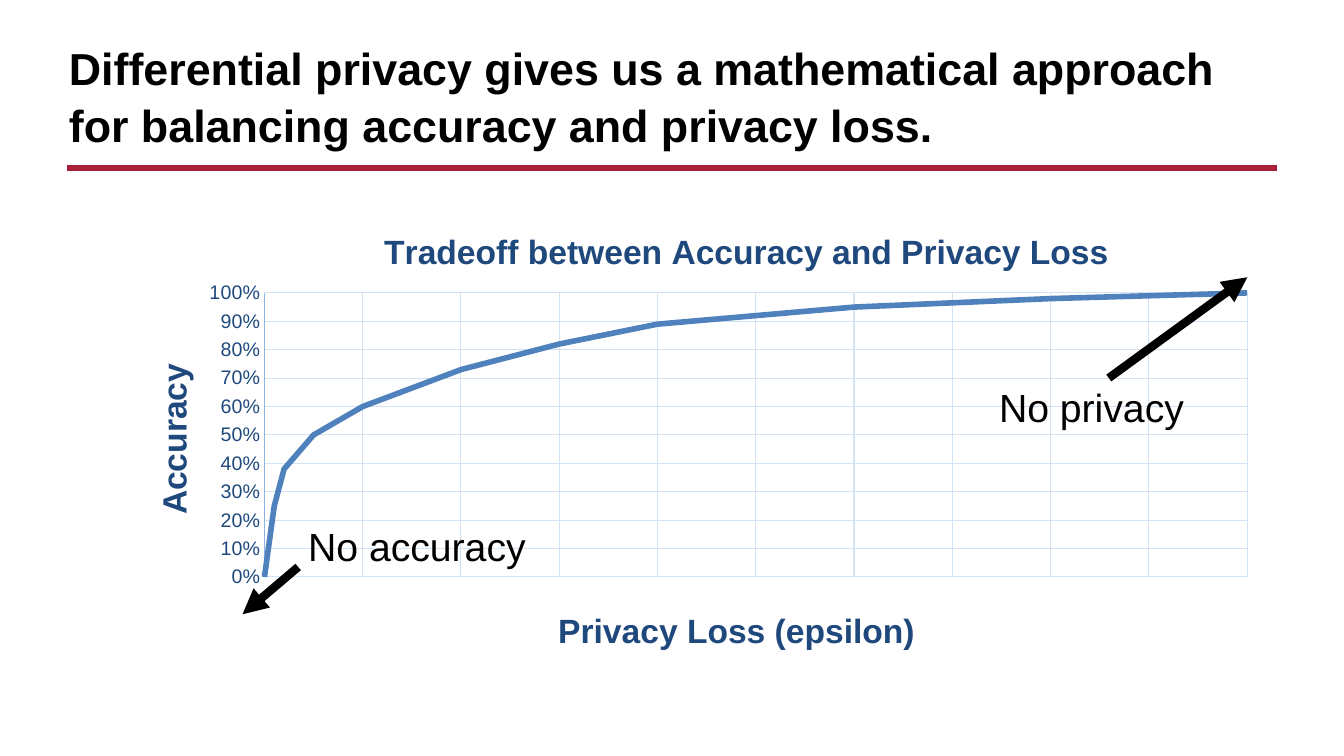
from lxml import etree
from pptx import Presentation
from pptx.chart.data import XyChartData
from pptx.dml.color import RGBColor
from pptx.enum.chart import XL_CHART_TYPE, XL_TICK_MARK
from pptx.enum.shapes import MSO_CONNECTOR
from pptx.enum.text import MSO_ANCHOR, MSO_AUTO_SIZE, PP_ALIGN
from pptx.oxml import parse_xml
from pptx.oxml.ns import nsdecls, qn
from pptx.util import Pt

TITLE = ("Differential privacy gives us a mathematical approach "
         "for balancing accuracy and privacy loss.")
CHART_TITLE = "Tradeoff between Accuracy and Privacy Loss"
X_TITLE, Y_TITLE = "Privacy Loss (epsilon)", "Accuracy"
POINTS = [(0, 0), (0.1, 0.25), (0.2, 0.38), (0.5, 0.5), (1, 0.6), (2, 0.73),
          (3, 0.82), (4, 0.89), (6, 0.95), (8, 0.98), (10, 1)]
# label, its left and top, arrow start, arrow end
NOTES = [("No privacy", (942, 360), (1056, 360), (1188, 264)),
         ("No accuracy", (284, 493), (284, 540), (231, 585))]
COLORS = {"text": "000000", "rule": "A9203D", "navy": "1F497D",
          "curve": "4F81BD", "axis": "8EB4E3", "grid": "D4E3F4"}
FONT = "Arial"
PX = 9525


def px(*lengths):
    return [n * PX for n in lengths]


def rgb(name):
    return RGBColor.from_string(COLORS[name])


def set_font(font, size, color, bold=False):
    font.name, font.size, font.bold = FONT, Pt(size), bold
    font.color.rgb = rgb(color)


def set_line(line, color, width):
    line.color.rgb = rgb(color)
    line.width = Pt(width)


def add_line(start, end, color, width, arrow=False):
    c = s.shapes.add_connector(MSO_CONNECTOR.STRAIGHT, *px(*start, *end))
    set_line(c.line, color, width)
    if arrow:
        etree.SubElement(c.line._get_or_add_ln(), qn("a:tailEnd"), type="triangle")
    etree.SubElement(c._element.spPr, qn("a:effectLst"))


def place(parent, before, x, y, w=None, h=None):
    """Give a chart part a fixed place, in fractions of the chart."""
    sizes = [("xMode", "edge"), ("yMode", "edge"), ("x", x), ("y", y)]
    if w:
        sizes = [("layoutTarget", "inner")] + sizes + [("w", w), ("h", h)]
    parts = "".join(f'<c:{tag} val="{val}"/>' for tag, val in sizes)
    for old in parent.findall(qn("c:layout")):
        parent.remove(old)
    layout = parse_xml(f'<c:layout {nsdecls("c")}><c:manualLayout>{parts}'
                       '</c:manualLayout></c:layout>')
    if before is None:
        parent.insert(0, layout)
    else:
        before.addnext(layout)


def add_title(owner, text, x, y):
    owner.has_title = True
    title = owner.chart_title if owner is chart else owner.axis_title
    r = title.text_frame.paragraphs[0].add_run()
    r.text = text
    set_font(r.font, 24, "navy", True)
    place(title._element, title._element.find(qn("c:tx")), x, y)
    return title


prs = Presentation()
prs.slide_width, prs.slide_height = px(1280, 720)
s = prs.slides.add_slide(prs.slide_layouts[5])
add_line((64, 160), (1216, 160), "rule", 4.5)

data = XyChartData()
series = data.add_series("Series 1")
for point in POINTS:
    series.add_data_point(*point)
chart = s.shapes.add_chart(XL_CHART_TYPE.XY_SCATTER_SMOOTH_NO_MARKERS,
                           *px(106, 191, 1105, 440), data).chart
chart.has_legend = False
set_font(chart.font, 10, "text")
plot = chart.plots[0]
plot.vary_by_categories = False
curve = plot.series[0]
curve.smooth = True
set_line(curve.format.line, "curve", 4)

x_axis, y_axis = chart.category_axis, chart.value_axis
for axis, top, step in ((x_axis, 10, 1), (y_axis, 1, 0.1)):
    axis.minimum_scale, axis.maximum_scale, axis.major_unit = 0, top, step
    axis.has_major_gridlines = True
    set_line(axis.major_gridlines.format.line, "grid", 0.75)
    axis.major_tick_mark = XL_TICK_MARK.NONE
x_axis.visible = False
set_line(y_axis.format.line, "axis", 0.75)
set_font(y_axis.tick_labels.font, 14, "navy")
y_axis.tick_labels.number_format = "0%"
y_axis.tick_labels.number_format_is_linked = False

add_title(chart, CHART_TITLE, 0.23, 0.05)
add_title(x_axis, X_TITLE, 0.38, 0.87)
y_title = add_title(y_axis, Y_TITLE, 0.03, 0.34)
body = y_title.text_frame._txBody.bodyPr
body.set("rot", "-5400000")
body.set("vert", "horz")
place(plot._element.getparent(), None, 0.132, 0.2, 0.847, 0.615)

for label, corner, start, end in NOTES:
    tf = s.shapes.add_textbox(*px(*corner, 228, 55)).text_frame
    tf.word_wrap = True
    tf.auto_size = MSO_AUTO_SIZE.SHAPE_TO_FIT_TEXT
    r = tf.paragraphs[0].add_run()
    r.text = label
    set_font(r.font, 28, "text")
    add_line(start, end, "text", 6, arrow=True)

title = s.shapes.title
title.left, title.top, title.width, title.height = px(56, 29, 1160, 120)
tf = title.text_frame
tf.word_wrap, tf.auto_size = True, MSO_AUTO_SIZE.NONE
tf.vertical_anchor = MSO_ANCHOR.BOTTOM
p = tf.paragraphs[0]
p.alignment, p.line_spacing = PP_ALIGN.LEFT, 1.05
r = p.add_run()
r.text = TITLE
set_font(r.font, 32, "text", True)
prs.save("out.pptx")
